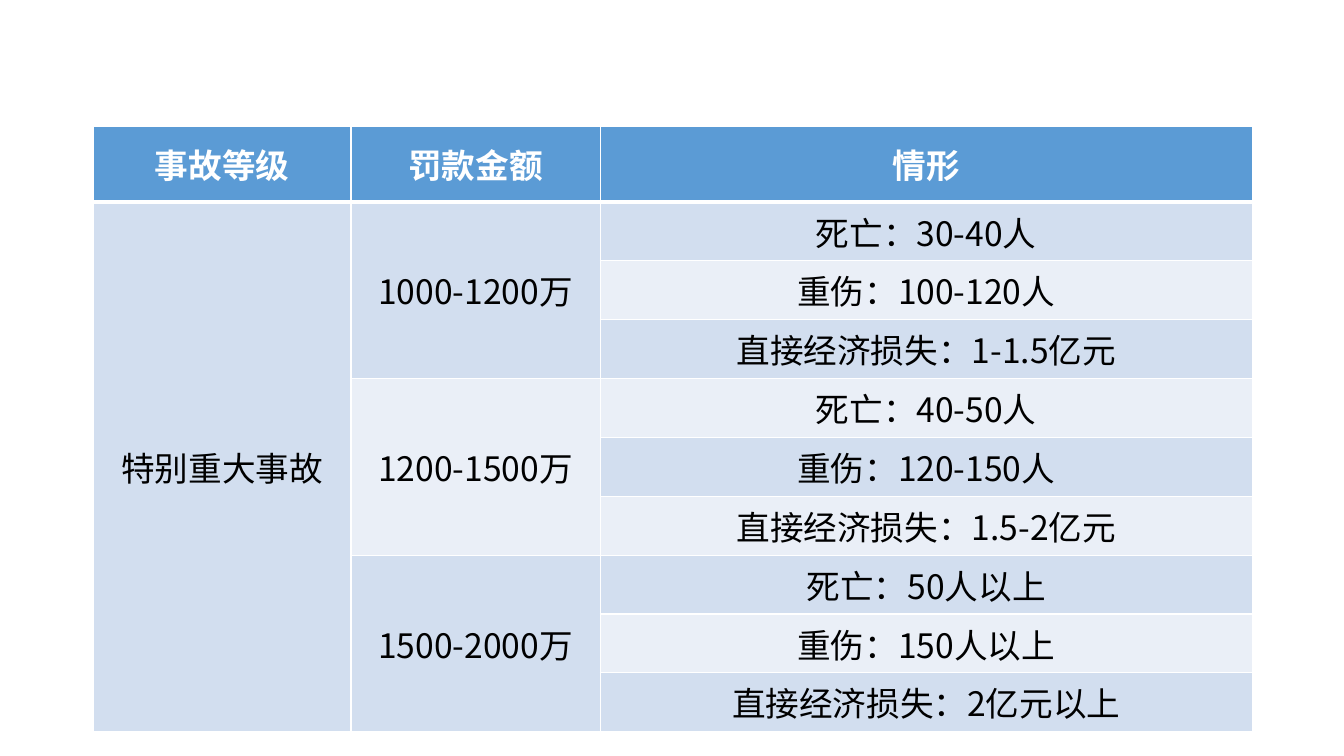
from lxml.etree import SubElement
from pptx import Presentation
from pptx.dml.color import RGBColor
from pptx.enum.text import MSO_ANCHOR, PP_ALIGN
from pptx.oxml.ns import qn
from pptx.util import Inches, Pt

HEADINGS = ["事故等级", "罚款金额", "情形"]
ACCIDENT_LEVEL = "特别重大事故"
FINES = [
    ("1000-1200万", ["死亡：30-40人", "重伤：100-120人", "直接经济损失：1-1.5亿元"]),
    ("1200-1500万", ["死亡：40-50人", "重伤：120-150人", "直接经济损失：1.5-2亿元"]),
    ("1500-2000万", ["死亡：50人以上", "重伤：150人以上", "直接经济损失：2亿元以上"]),
]
FONT = "Noto Sans CJK SC"
HEADER_FILL, BANDS, WHITE, BLACK = "5B9BD5", ["D2DEEF", "EAEFF7"], "FFFFFF", "000000"
COLUMN_WIDTHS = [258, 249, 652]
LEFT, TOP, HEADER_HEIGHT, ROW_HEIGHT = 93, 126, 76, 54
THIN, THICK = 1, 3


def px(length):
    return round(length * 914400 / 100.8)


def colour(code):
    return RGBColor.from_string(code)


def add_borders(cell, row):
    """Draw white cell edges, heavier between the header and the body."""
    widths = {"L": THIN, "R": THIN, "T": THICK if row == 1 else THIN, "B": THICK if row == 0 else THIN}
    properties = cell._tc.get_or_add_tcPr()
    for side, width in widths.items():
        line = SubElement(properties, qn(f"a:ln{side}"), w=str(Pt(width)))
        fill = SubElement(line, qn("a:solidFill"))
        SubElement(fill, qn("a:srgbClr"), val=WHITE)


def write(cell, text, text_colour, bold):
    cell.vertical_anchor = MSO_ANCHOR.MIDDLE
    para = cell.text_frame.paragraphs[0]
    para.alignment = PP_ALIGN.CENTER
    span = para.add_run()
    span.text = text
    for name, value in {"name": FONT, "size": Pt(24), "bold": bold}.items():
        setattr(span.font, name, value)
    span.font.color.rgb = colour(text_colour)
    SubElement(span._r.get_or_add_rPr(), qn("a:ea"), typeface=FONT)


def build_table(page):
    body_rows = sum(len(cases) for _, cases in FINES)
    height = HEADER_HEIGHT + body_rows * ROW_HEIGHT
    frame = page.shapes.add_table(body_rows + 1, len(HEADINGS), px(LEFT), px(TOP),
                                  px(sum(COLUMN_WIDTHS)), px(height))
    table = frame.table
    for column, width in zip(table.columns, COLUMN_WIDTHS):
        column.width = px(width)
    for index, row in enumerate(table.rows):
        row.height = px(ROW_HEIGHT if index else HEADER_HEIGHT)
        for cell in row.cells:
            add_borders(cell, index)
            cell.fill.solid()
            cell.fill.fore_color.rgb = colour(BANDS[(index - 1) % 2] if index else HEADER_FILL)

    for column, heading in enumerate(HEADINGS):
        write(table.cell(0, column), heading, WHITE, True)
    table.cell(1, 0).merge(table.cell(body_rows, 0))
    write(table.cell(1, 0), ACCIDENT_LEVEL, BLACK, False)
    first = 1
    for fine, cases in FINES:
        table.cell(first, 1).merge(table.cell(first + len(cases) - 1, 1))
        write(table.cell(first, 1), fine, BLACK, False)
        for row, case in enumerate(cases, first):
            write(table.cell(row, 2), case, BLACK, False)
        first += len(cases)


def main():
    deck = Presentation()
    deck.slide_width, deck.slide_height = Inches(13.33), Inches(7.5)
    page = deck.slides.add_slide(deck.slide_layouts[6])
    build_table(page)
    deck.save("out.pptx")


if __name__ == "__main__":
    main()
